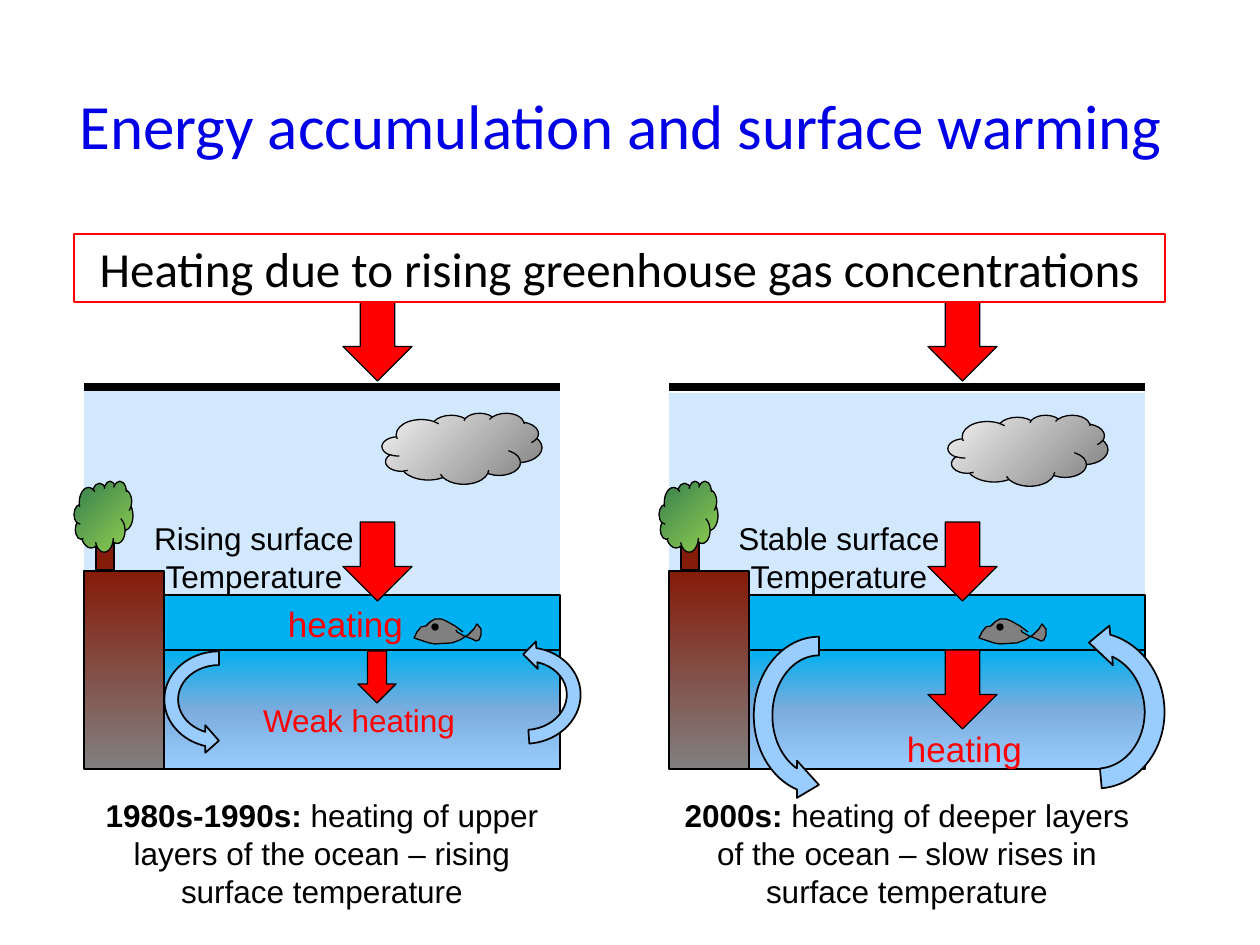
from dataclasses import dataclass
from typing import Any, Optional

from lxml.etree import SubElement
from pptx import Presentation
from pptx.dml.color import RGBColor
from pptx.enum.shapes import MSO_CONNECTOR, MSO_SHAPE
from pptx.enum.text import MSO_ANCHOR, PP_ALIGN
from pptx.oxml.ns import qn
from pptx.util import Pt

EMU_PER_PX = 914400 / 126


@dataclass(frozen=True)
class Theme:
    black: str = "000000"
    red: str = "FF0000"
    title: str = "0000E6"
    sky: str = "99CCFF"
    sky_opacity: int = 45
    surface: str = "00B0F0"
    bark: str = "851B09"
    gray: str = "808080"
    deep_water: tuple[str, ...] = ("00B0F0", "7BACDD", "99CCFF")
    land: tuple[str, ...] = ("851B09", "808080")
    leaves: tuple[str, ...] = ("92D050", "367E4E")
    cloud: tuple[str, ...] = ("808080", "F2F2F2")
    heading_font: str = "Calibri"
    body_font: str = "Arial"
    title_size: int = 36
    banner_size: int = 28
    heating_size: int = 20
    body_size: int = 18
    outline: float = 0.75
    current_outline: float = 1
    atmosphere_line: float = 5


THEME = Theme()


@dataclass(frozen=True)
class Box:
    left: int
    top: int
    width: int
    height: int

    def shifted(self, offset: int) -> "Box":
        return Box(self.left + offset, self.top, self.width, self.height)

    def emu(self) -> tuple[int, ...]:
        return tuple(emu(n) for n in (self.left, self.top, self.width, self.height))


@dataclass(frozen=True)
class Label:
    text: str
    box: Box
    size: int


@dataclass(frozen=True)
class Current:
    box: Box
    rotation: int


@dataclass(frozen=True)
class Panel:
    """One ocean scene; everything but left is measured from its left edge."""
    left: int
    sky_top: int
    cloud: Box
    fish_left: int
    ocean_arrow: Box
    surface_text: str
    heating_labels: tuple[Label, ...]
    currents: tuple[Current, ...]
    period: str
    caption: str


PANELS = (
    Panel(84, 387, Box(298, 413, 160, 71), 329, Box(274, 651, 38, 52),
          "Rising surface Temperature",
          (Label("heating", Box(179, 596, 165, 55), THEME.heating_size),
           Label("Weak heating", Box(134, 695, 282, 50), THEME.body_size)),
          (Current(Box(80, 638, 110, 123), 270), Current(Box(387, 634, 110, 123), 86)),
          "1980s-1990s: ",
          "heating of upper layers of the ocean – rising surface temperature"),
    Panel(669, 393, Box(279, 415, 160, 71), 309, Box(259, 650, 69, 79),
          "Stable surface Temperature",
          (Label("heating", Box(213, 721, 165, 55), THEME.heating_size),),
          (Current(Box(62, 641, 176, 149), 270), Current(Box(338, 631, 176, 159), 85)),
          "2000s: ",
          "heating of deeper layers of the ocean – slow rises in surface temperature"),
)

FISH_TOP = 618
FISH_OUTLINE = (
    (50, 14), (42, 8), (33, 3), (28, 1), (22, 1), (17, 4), (13, 8), (8, 9), (4, 14),
    (1, 20), (16, 25), (22, 26), (39, 25), (47, 22), (55, 17), (61, 11), (64, 6),
    (68, 11), (68, 17), (66, 22), (63, 23), (59, 21), (51, 18), (44, 14), (43, 12),
)


def emu(px: int) -> int:
    return round(px * EMU_PER_PX)


def color(value: str) -> RGBColor:
    return RGBColor.from_string(value)


def set_gradient(shape: Any, colors: tuple[str, ...], from_corner: bool) -> None:
    """Spread colors evenly, downwards or outwards from the bottom right corner."""
    shape.fill.gradient()
    gradient = shape._element.spPr.find(qn("a:gradFill"))
    for child in list(gradient):
        gradient.remove(child)
    stops = SubElement(gradient, qn("a:gsLst"))
    for index, value in enumerate(colors):
        position = 100000 * index // (len(colors) - 1)
        stop = SubElement(stops, qn("a:gs"), pos=str(position))
        SubElement(stop, qn("a:srgbClr"), val=value)
    if from_corner:
        circle = SubElement(gradient, qn("a:path"), path="circle")
        SubElement(circle, qn("a:fillToRect"), l="100000", t="100000")
    else:
        SubElement(gradient, qn("a:lin"), ang="5400000", scaled="0")


def style_shape(shape: Any, fill: Optional[str], line: Optional[str] = THEME.black,
                line_width: float = THEME.outline) -> None:
    shape.shadow.inherit = False
    if fill:
        shape.fill.solid()
        shape.fill.fore_color.rgb = color(fill)
    else:
        shape.fill.background()
    if line:
        shape.line.color.rgb = color(line)
        shape.line.width = Pt(line_width)
    else:
        shape.line.fill.background()


def add_figure(slide: Any, kind: MSO_SHAPE, box: Box, fill: Optional[str] = None,
               gradient: tuple[str, ...] = (), from_corner: bool = False,
               **line_format: Any) -> Any:
    shape = slide.shapes.add_shape(kind, *box.emu())
    style_shape(shape, fill, **line_format)
    if gradient:
        set_gradient(shape, gradient, from_corner)
    return shape


def write_text(shape: Any, text: str, *, size: int, lead: str = "",
               font: str = THEME.body_font, ink: str = THEME.black,
               anchor: MSO_ANCHOR = MSO_ANCHOR.TOP) -> None:
    """Write centred text, after an optional bold lead."""
    frame = shape.text_frame
    frame.word_wrap = True
    frame.vertical_anchor = anchor
    paragraph = frame.paragraphs[0]
    paragraph.alignment = PP_ALIGN.CENTER
    for part, bold in ((lead, True), (text, False)):
        if part:
            run = paragraph.add_run()
            run.text = part
            run.font.name = font
            run.font.size = Pt(size)
            run.font.bold = bold
            run.font.color.rgb = color(ink)


def add_label(slide: Any, text: str, box: Box, **text_format: Any) -> None:
    write_text(slide.shapes.add_textbox(*box.emu()), text, **text_format)


def add_fish(slide: Any, left: int) -> None:
    builder = slide.shapes.build_freeform(*FISH_OUTLINE[0], scale=EMU_PER_PX)
    builder.add_line_segments(FISH_OUTLINE[1:], close=False)
    style_shape(builder.convert_to_shape(emu(left), emu(FISH_TOP)), THEME.gray)
    add_figure(slide, MSO_SHAPE.OVAL, Box(left + 19, FISH_TOP + 6, 6, 6), THEME.black)


def add_atmosphere_line(slide: Any, left: int) -> None:
    height = emu(387)
    line = slide.shapes.add_connector(
        MSO_CONNECTOR.STRAIGHT, emu(left), height, emu(left + 476), height)
    line.line.color.rgb = color(THEME.black)
    line.line.width = Pt(THEME.atmosphere_line)
    SubElement(line._element.spPr, qn("a:effectLst"))


def add_current(slide: Any, current: Current, offset: int) -> None:
    shape = add_figure(slide, MSO_SHAPE.CIRCULAR_ARROW, current.box.shifted(offset),
                       THEME.sky, line_width=THEME.current_outline)
    shape._element.spPr.xfrm.set("flipH", "1")
    shape.rotation = current.rotation


def add_panel(slide: Any, panel: Panel) -> None:
    left = panel.left
    rectangle = MSO_SHAPE.RECTANGLE
    sky = add_figure(slide, rectangle, Box(left, panel.sky_top, 476, 208), THEME.sky, line=None)
    sky_color = sky._element.spPr.find(qn("a:solidFill"))[0]
    SubElement(sky_color, qn("a:alpha"), val=str(THEME.sky_opacity * 1000))
    add_figure(slide, rectangle, Box(left + 80, 650, 396, 119), gradient=THEME.deep_water)
    add_figure(slide, rectangle, Box(left, 571, 80, 198), gradient=THEME.land)
    add_figure(slide, rectangle, Box(left + 80, 595, 396, 55), THEME.surface)
    add_figure(slide, rectangle, Box(left + 12, 537, 18, 33), THEME.bark)
    add_figure(slide, MSO_SHAPE.CLOUD, Box(left - 10, 481, 59, 71),
               gradient=THEME.leaves, from_corner=True)
    add_fish(slide, left + panel.fish_left)
    add_atmosphere_line(slide, left)
    arrows = (Box(259, 302, 69, 79), Box(259, 522, 69, 79), panel.ocean_arrow)
    for arrow in arrows:
        add_figure(slide, MSO_SHAPE.DOWN_ARROW, arrow.shifted(left), THEME.red)
    add_label(slide, panel.surface_text, Box(left + 52, 513, 236, 89), size=THEME.body_size)
    for label in panel.heating_labels:
        add_label(slide, label.text, label.box.shifted(left), size=label.size, ink=THEME.red)
    add_figure(slide, MSO_SHAPE.CLOUD, panel.cloud.shifted(left),
               gradient=THEME.cloud, from_corner=True)
    add_label(slide, panel.caption, Box(left, 790, 476, 127),
              size=THEME.body_size, lead=panel.period)
    for current in panel.currents:
        add_current(slide, current, left)


def main() -> None:
    presentation = Presentation()
    presentation.slide_width = emu(1260)
    presentation.slide_height = emu(945)
    slide = presentation.slides.add_slide(presentation.slide_layouts[6])
    add_label(slide, "Energy accumulation and surface warming", Box(54, 45, 1134, 158),
              size=THEME.title_size, font=THEME.heading_font, ink=THEME.title,
              anchor=MSO_ANCHOR.MIDDLE)
    for panel in PANELS:
        add_panel(slide, panel)
    banner = add_figure(slide, MSO_SHAPE.RECTANGLE, Box(74, 234, 1091, 68), line=THEME.red)
    write_text(banner, "Heating due to rising greenhouse gas concentrations",
               size=THEME.banner_size, font=THEME.heading_font, anchor=MSO_ANCHOR.MIDDLE)
    presentation.save("out.pptx")


if __name__ == "__main__":
    main()
